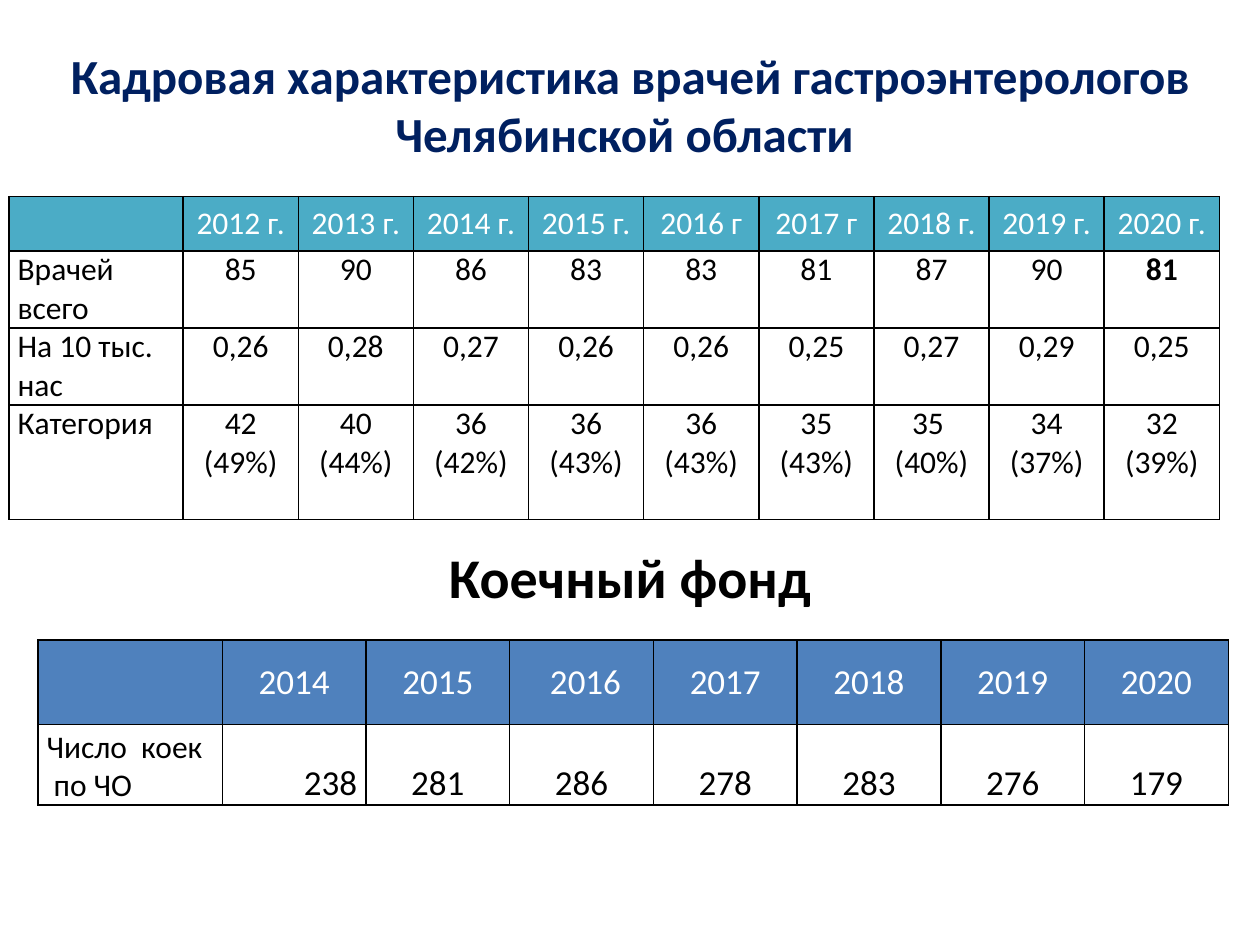
from dataclasses import dataclass

from lxml import etree
from pptx import Presentation
from pptx.dml.color import RGBColor
from pptx.enum.text import MSO_ANCHOR, PP_ALIGN
from pptx.oxml.ns import qn
from pptx.slide import Slide
from pptx.util import Inches, Pt

LEFT, CENTER, RIGHT = PP_ALIGN.LEFT, PP_ALIGN.CENTER, PP_ALIGN.RIGHT
TOP, MIDDLE, BOTTOM = MSO_ANCHOR.TOP, MSO_ANCHOR.MIDDLE, MSO_ANCHOR.BOTTOM

WIDTH, HEIGHT = 10, 7.5
FONT = "Calibri"
COLORS = {
    "navy": "002060",
    "black": "000000",
    "white": "FFFFFF",
    "teal": "4BACC6",
    "blue": "4F81BD",
}

STAFF = [
    ["", "2012 г.", "2013 г.", "2014 г.", "2015 г.", "2016 г", "2017 г",
     "2018 г.", "2019 г.", "2020 г."],
    ["Врачей всего", "85", "90", "86", "83", "83", "81", "87", "90", "81"],
    ["На 10 тыс. нас", "0,26", "0,28", "0,27", "0,26", "0,26", "0,25",
     "0,27", "0,29", "0,25"],
    ["Категория", "42 (49%)", "40 (44%)", "36 (42%)", "36 (43%)", "36 (43%)",
     "35 (43%)", "35  (40%)", "34 (37%)", "32 (39%)"],
]
BEDS = [
    ["", " 2014 ", "2015", " 2016", "2017", "2018", "2019", "2020"],
    ["Число  коек\n по ЧО", "238", "281", "286", "278", "283", "276", "179"],
]


@dataclass
class SlideBuilder:
    """Places styled elements on one slide, measured in shares of its size."""

    slide: Slide

    def frame(self, left, top, width, height):
        return (Inches(left * WIDTH), Inches(top * HEIGHT),
                Inches(width * WIDTH), Inches(height * HEIGHT))

    def style(self, text_frame, size, color, align=CENTER, bold=False):
        for para in text_frame.paragraphs:
            para.alignment = align
            for span in para.runs:
                span.font.name = FONT
                span.font.size = Pt(size)
                span.font.bold = bold
                span.font.color.rgb = RGBColor.from_string(COLORS[color])

    def title(self, text, area):
        box = self.slide.shapes.title
        box.left, box.top, box.width, box.height = self.frame(*area)
        box.text_frame.text = text
        box.text_frame.vertical_anchor = MIDDLE
        self.style(box.text_frame, 28, "navy", bold=True)

    def heading(self, text, area):
        box = self.slide.shapes.add_textbox(*self.frame(*area))
        box.text_frame.word_wrap = True
        box.text_frame.vertical_anchor = MIDDLE
        box.text_frame.text = text
        self.style(box.text_frame, 32, "black", bold=True)

    def border(self, cell):
        properties = cell._tc.get_or_add_tcPr()
        for position, side in enumerate(("lnL", "lnR", "lnT", "lnB")):
            line = etree.Element(qn(f"a:{side}"), w=str(Pt(1)))
            fill = etree.SubElement(line, qn("a:solidFill"))
            etree.SubElement(fill, qn("a:srgbClr"), val=COLORS["black"])
            properties.insert(position, line)

    def cell(self, cell, text, size, color, fill, align, anchor):
        cell.text_frame.text = text
        cell.margin_left = cell.margin_right = Inches(0.07)
        cell.margin_top = cell.margin_bottom = 0
        cell.vertical_anchor = anchor
        cell.fill.solid()
        cell.fill.fore_color.rgb = RGBColor.from_string(COLORS[fill])
        self.border(cell)
        self.style(cell.text_frame, size, color, align)

    def table(self, rows, area, label_share, row_shares, size, fill, anchor):
        left, top, width, height = self.frame(*area)
        columns = len(rows[0])
        table = self.slide.shapes.add_table(
            len(rows), columns, left, top, width, height).table
        label_width = int(width * label_share)
        for index, column in enumerate(table.columns):
            column.width = (width - label_width) // (columns - 1) if index else label_width
        for row, share in zip(table.rows, row_shares):
            row.height = int(height * share / sum(row_shares))
        for r, values in enumerate(rows):
            for c, text in enumerate(values):
                self.cell(
                    table.cell(r, c), text,
                    size if c or not r else 18,
                    "black" if r else "white",
                    "white" if r else fill,
                    CENTER if c else LEFT,
                    anchor if r else MIDDLE)
        return table


def main():
    deck = Presentation()
    deck.slide_width, deck.slide_height = Inches(WIDTH), Inches(HEIGHT)
    page = SlideBuilder(deck.slides.add_slide(deck.slide_layouts[5]))

    page.title("Кадровая характеристика врачей гастроэнтерологов Челябинской области ",
               (0, 0.03, 1, 0.16))
    staff = page.table(STAFF, (0.007, 0.208, 0.961, 0.342), 0.144,
                       (0.43, 0.61, 0.61, 0.91), 18, "teal", TOP)
    page.style(staff.cell(1, 9).text_frame, 18, "black", bold=True)

    page.heading("Коечный фонд", (0.05, 0.56, 0.9, 0.1))
    beds = page.table(BEDS, (0.03, 0.677, 0.945, 0.175), 0.155,
                      (0.67, 0.64), 20, "blue", BOTTOM)
    page.style(beds.cell(1, 1).text_frame, 20, "black", RIGHT)

    deck.save("out.pptx")


if __name__ == "__main__":
    main()
